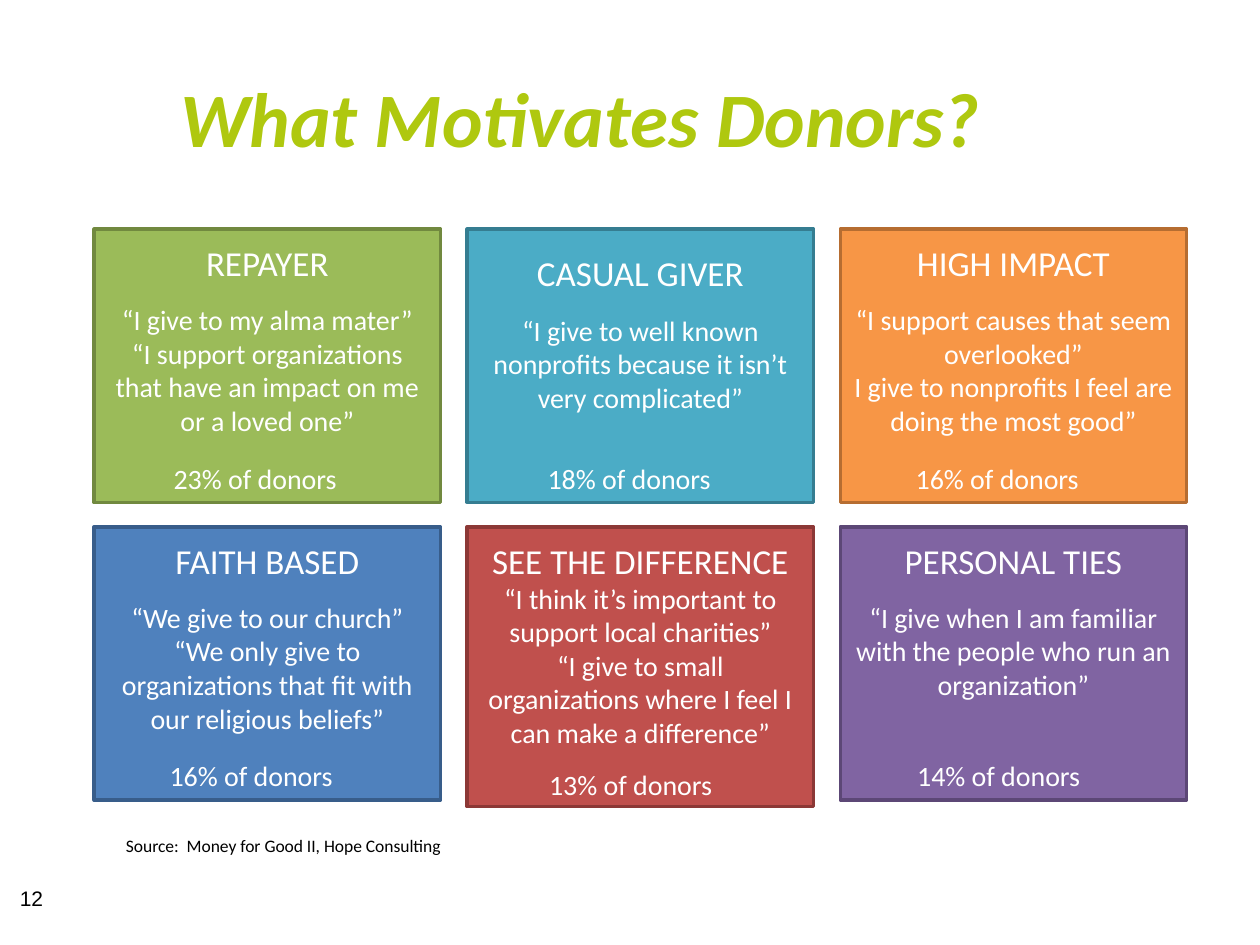
from dataclasses import dataclass

from pptx import Presentation
from pptx.dml.color import RGBColor
from pptx.enum.shapes import MSO_SHAPE
from pptx.enum.text import MSO_ANCHOR, PP_ALIGN
from pptx.slide import Slide
from pptx.text.text import TextFrame
from pptx.util import Cm, Pt

WHITE = RGBColor(0xFF, 0xFF, 0xFF)
BLACK = RGBColor(0, 0, 0)
LIME = RGBColor(0xAF, 0xC8, 0x0F)
GREEN, MOSS = RGBColor(0x9B, 0xBB, 0x59), RGBColor(0x71, 0x89, 0x3F)
AQUA, TEAL = RGBColor(0x4B, 0xAC, 0xC6), RGBColor(0x35, 0x7D, 0x91)
ORANGE, RUST = RGBColor(0xF7, 0x96, 0x46), RGBColor(0xB6, 0x6D, 0x31)
BLUE, NAVY = RGBColor(0x4F, 0x81, 0xBD), RGBColor(0x38, 0x5D, 0x8A)
RED, WINE = RGBColor(0xC0, 0x50, 0x4D), RGBColor(0x8C, 0x38, 0x36)
PURPLE, PLUM = RGBColor(0x80, 0x64, 0xA2), RGBColor(0x5C, 0x47, 0x76)

# Card grid, in centimetres
LEFT, TOP = 1.9, 4.62
WIDE, HIGH = 6.98, 5.51
STEP_X, STEP_Y = 7.52, 6
COLS = 3


@dataclass
class Card:
    name: str
    quotes: list[str]
    share: str
    fill: RGBColor
    edge: RGBColor
    share_x: float  # offset of the share from the card's corner
    share_y: float = 4.55
    high: float = HIGH
    inset: float = 0.25
    gap: float = 11


CARDS = [
    Card("REPAYER",
         ["“I give to my alma mater”",
          "“I support organizations that have an impact on me or a loved one”"],
         "23%", GREEN, MOSS, 1.35),
    Card("CASUAL GIVER",
         ["“I give to well known nonprofits because it isn’t very complicated”"],
         "18%", AQUA, TEAL, 1.37, inset=0.46),
    Card("HIGH IMPACT",
         ["“I support causes that seem overlooked”",
          "I give to nonprofits I feel are doing the most good”"],
         "16%", ORANGE, RUST, 1.27),
    Card("FAITH BASED",
         ["“We give to our church”",
          "“We only give to organizations that fit with our religious beliefs”"],
         "16%", BLUE, NAVY, 1.27),
    Card("SEE THE DIFFERENCE",
         ["“I think it’s important to support local charities”",
          "“I give to small organizations where I feel I can make a difference”"],
         "13%", RED, WINE, 1.4, share_y=4.72, high=5.64, gap=0),
    Card("PERSONAL TIES",
         ["“I give when I am familiar with the people who run an organization”"],
         "14%", PURPLE, PLUM, 1.3),
]


def put_line(frame: TextFrame, text: str, size: float, color: RGBColor,
             face: str = "Calibri", first: bool = True):
    """Write one paragraph in the frame and return it."""
    para = frame.paragraphs[0] if first else frame.add_paragraph()
    para.text = text
    para.font.name = face
    para.font.size = Pt(size)
    para.font.color.rgb = color
    return para


def put_text(slide: Slide, x: float, y: float, wide: float, high: float,
             text: str, size: float, color: RGBColor, face: str = "Calibri"):
    """Add a one-line text box and return its frame and paragraph."""
    frame = slide.shapes.add_textbox(Cm(x), Cm(y), Cm(wide), Cm(high)).text_frame
    frame.word_wrap = True
    return frame, put_line(frame, text, size, color, face)


def put_card(slide: Slide, card: Card, x: float, y: float) -> None:
    """Draw a donor type with its quotes and its share."""
    box = slide.shapes.add_shape(MSO_SHAPE.RECTANGLE, Cm(x), Cm(y),
                                 Cm(WIDE), Cm(card.high))
    box.shadow.inherit = False
    box.fill.solid()
    box.fill.fore_color.rgb = card.fill
    box.line.color.rgb = card.edge
    box.line.width = Pt(2)

    frame = box.text_frame
    frame.word_wrap = True
    frame.vertical_anchor = MSO_ANCHOR.TOP
    frame.margin_top = Cm(card.inset)
    put_line(frame, card.name, 20, WHITE).alignment = PP_ALIGN.CENTER
    for i, quote in enumerate(card.quotes):
        para = put_line(frame, quote, 16, WHITE, first=False)
        para.alignment = PP_ALIGN.CENTER
        para.space_before = Pt(0 if i else card.gap)

    put_text(slide, x + card.share_x, y + card.share_y, 4.45, 0.94,
             f"{card.share} of donors", 16, WHITE)


def main() -> None:
    deck = Presentation()
    deck.slide_width, deck.slide_height = Cm(25.4), Cm(19.05)
    slide = deck.slides.add_slide(deck.slide_layouts[6])

    # Title
    frame, para = put_text(slide, 3.38, 0.76, 22, 3.18,
                           "What Motivates Donors?", 44, LIME)
    frame.vertical_anchor = MSO_ANCHOR.MIDDLE
    para.font.bold = para.font.italic = True

    # Donor types
    for i, card in enumerate(CARDS):
        row, col = divmod(i, COLS)
        put_card(slide, card, LEFT + col * STEP_X, TOP + row * STEP_Y)

    # Source and page number
    put_text(slide, 2.29, 16.71, 10.31, 0.69,
             "Source:  Money for Good II, Hope Consulting", 10, BLACK)
    put_text(slide, 0.15, 17.73, 1.9, 1.02, "12", 12, BLACK, "Arial")

    deck.save("out.pptx")


if __name__ == "__main__":
    main()
